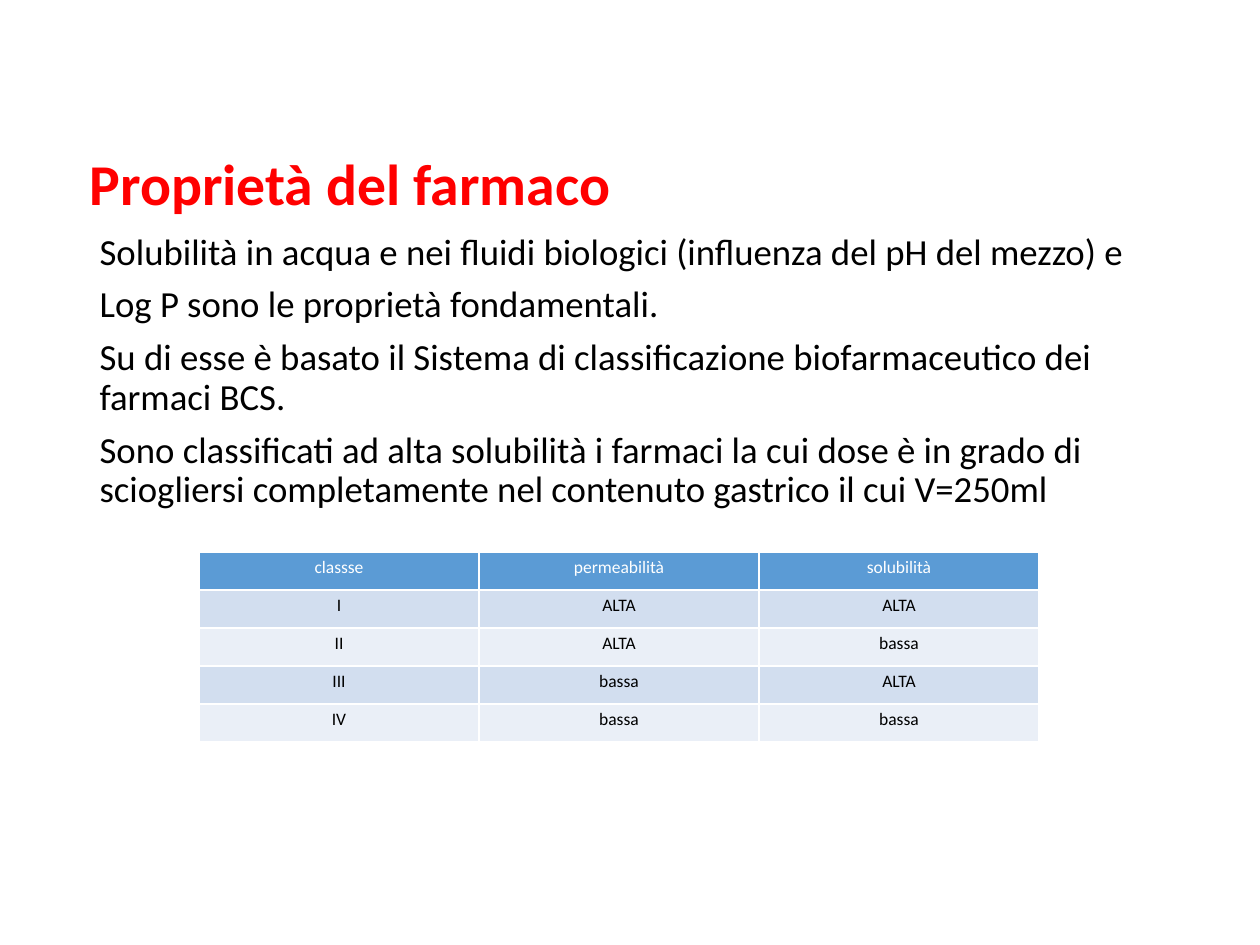
import pptx
import pptx.util
import pptx.dml.color
import pptx.enum.text
import pptx.oxml
import pptx.oxml.ns

ALIGN = pptx.enum.text.PP_ALIGN
ANCHOR = pptx.enum.text.MSO_ANCHOR
SCALE = 914400 / 126


def px(num):
    return pptx.util.Emu(round(num * SCALE))


def tint(code):
    return pptx.dml.color.RGBColor.from_string(code)


def apply(obj, form):
    for key, val in form.items():
        setattr(obj, key, val)


class Deck:
    """Hold the style and the current slide, and draw each kind of element."""

    face = "Calibri"
    line = "FFFFFF"

    def __init__(self, wide, high):
        self.prs = pptx.Presentation()
        apply(self.prs, {"slide_width": px(wide), "slide_height": px(high)})
        self.slide = self.prs.slides.add_slide(self.prs.slide_layouts[1])

    def label(self, para, text, size, color, bold=False, **form):
        apply(para, form)
        run = para.add_run()
        run.text = text
        apply(run.font, {"name": self.face, "size": pptx.util.Pt(size), "bold": bold})
        run.font.color.rgb = tint(color)

    def place(self, index, box, anchor):
        shape = self.slide.placeholders[index]
        apply(shape, dict(zip(("left", "top", "width", "height"), map(px, box))))
        frame = shape.text_frame
        apply(frame, {"word_wrap": True, "vertical_anchor": anchor,
                      "auto_size": pptx.enum.text.MSO_AUTO_SIZE.NONE})
        return frame

    def title(self, text, box, size, color):
        frame = self.place(0, box, ANCHOR.MIDDLE)
        self.label(frame.paragraphs[0], text, size, color, True,
                   alignment=ALIGN.LEFT, line_spacing=0.9)

    def body(self, items, box, size, color, gap):
        frame = self.place(1, box, ANCHOR.TOP)
        for num, text in enumerate(items):
            para = frame.add_paragraph() if num else frame.paragraphs[0]
            props = para._p.get_or_add_pPr()
            props.set("marL", "0")
            props.set("indent", "0")
            props.append(pptx.oxml.parse_xml(
                "<a:buNone %s/>" % pptx.oxml.ns.nsdecls("a")))
            self.label(para, text, size, color, alignment=ALIGN.LEFT, line_spacing=0.9,
                       space_before=pptx.util.Pt(gap if num else 0))

    def border(self, cell, width):
        props = cell._tc.get_or_add_tcPr()
        for num, side in enumerate("LRTB"):
            props.insert(num, pptx.oxml.parse_xml(
                '<a:ln%s %s w="%d"><a:solidFill><a:srgbClr val="%s"/></a:solidFill></a:ln%s>'
                % (side, pptx.oxml.ns.nsdecls("a"), pptx.util.Pt(width), self.line, side)))

    def table(self, rows, left, top, wide, high, size, head, bands):
        count = len(rows[0])
        grid = self.slide.shapes.add_table(
            len(rows), count, px(left), px(top), px(wide * count), px(high * len(rows))).table
        for row, texts in enumerate(rows):
            fill, color = (bands[(row - 1) % 2], "000000") if row else (head, "FFFFFF")
            for col, text in enumerate(texts):
                cell = grid.cell(row, col)
                apply(cell, {"margin_left": px(9), "margin_right": px(9),
                             "margin_top": px(5), "margin_bottom": px(5)})
                cell.fill.solid()
                cell.fill.fore_color.rgb = tint(fill)
                self.border(cell, 1)
                self.label(cell.text_frame.paragraphs[0], text, size, color,
                           alignment=ALIGN.CENTER)

    def save(self):
        self.prs.save("out.pptx")


def main():
    deck = Deck(1260, 945)
    deck.title("Proprietà del farmaco", (77, 118, 1086, 137), 33, "FF0000")
    deck.body([
        "Solubilità in acqua e nei fluidi biologici (influenza del pH del mezzo) e",
        "Log P sono le proprietà fondamentali.",
        "Su di esse è basato il Sistema di classificazione biofarmaceutico dei farmaci BCS.",
        "Sono classificati ad alta solubilità i farmaci la cui dose è in grado di "
        "sciogliersi completamente nel contenuto gastrico il cui V=250ml",
    ], (87, 227, 1086, 530), 21, "000000", 7.5)
    deck.table([
        ("classse", "permeabilità", "solubilità"),
        ("I", "ALTA", "ALTA"),
        ("II", "ALTA", "bassa"),
        ("III", "bassa", "ALTA"),
        ("IV", "bassa", "bassa"),
    ], 199, 552, 280, 38, 10, "5B9BD5", ("D2DEEF", "EAEFF7"))
    deck.save()


if __name__ == "__main__":
    main()
